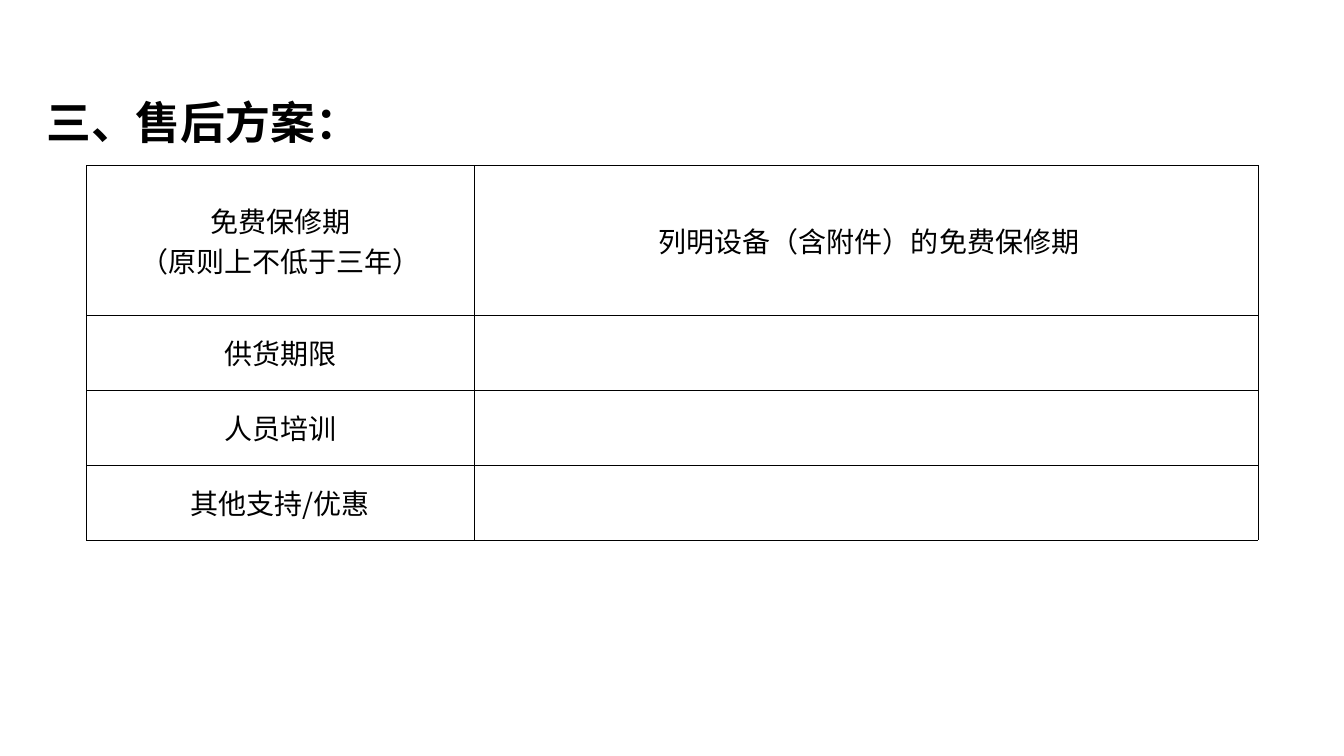
from dataclasses import dataclass

import pptx
import pptx.dml.color
import pptx.enum.text
import pptx.oxml.ns
import pptx.table
import pptx.text.text
import pptx.util
from lxml import etree

Pt = pptx.util.Pt
FONT = "Noto Sans CJK SC"
BLACK = "000000"
UNIT_HEIGHT = 53.5
COLUMN_WIDTHS = (276.5, 560)


@dataclass
class ServiceRow:
    label: str
    detail: str = ""
    units: int = 1  # height in multiples of UNIT_HEIGHT


SERVICE_ROWS = [
    ServiceRow("免费保修期\n（原则上不低于三年）", " 列明设备（含附件）的免费保修期", 2),
    ServiceRow("供货期限"),
    ServiceRow("人员培训"),
    ServiceRow("其他支持/优惠"),
]


def color(value: str) -> pptx.dml.color.RGBColor:
    return pptx.dml.color.RGBColor.from_string(value)


def style_paragraph(para: pptx.text.text._Paragraph, size: float, bold: bool = False) -> None:
    para.font.size = Pt(size)
    para.font.bold = bold
    para.font.color.rgb = color(BLACK)
    para.font.name = FONT
    # East Asian typeface
    properties = para._p.get_or_add_pPr().get_or_add_defRPr()
    etree.SubElement(properties, pptx.oxml.ns.qn("a:ea"), typeface=FONT)


def add_borders(cell: pptx.table._Cell, width: float) -> None:
    properties = cell._tc.get_or_add_tcPr()
    for side in ("lnL", "lnR", "lnT", "lnB"):
        line = etree.SubElement(properties, pptx.oxml.ns.qn(f"a:{side}"), w=str(Pt(width)))
        fill = etree.SubElement(line, pptx.oxml.ns.qn("a:solidFill"))
        etree.SubElement(fill, pptx.oxml.ns.qn("a:srgbClr"), val=BLACK)


def fill_cell(cell: pptx.table._Cell, text: str) -> None:
    cell.margin_left = cell.margin_right = cell.margin_top = cell.margin_bottom = Pt(0)
    cell.vertical_anchor = pptx.enum.text.MSO_ANCHOR.MIDDLE
    add_borders(cell, 0.5)
    cell.fill.background()
    cell.text_frame.text = text
    for para in cell.text_frame.paragraphs:
        para.alignment = pptx.enum.text.PP_ALIGN.CENTER
        style_paragraph(para, 20)


def main() -> None:
    deck = pptx.Presentation()
    deck.slide_width, deck.slide_height = Pt(960), Pt(540)
    page = deck.slides.add_slide(deck.slide_layouts[6])

    # After-sales table
    total_height = UNIT_HEIGHT * sum(row.units for row in SERVICE_ROWS)
    frame = page.shapes.add_table(
        len(SERVICE_ROWS), len(COLUMN_WIDTHS),
        Pt(62), Pt(118.2), Pt(sum(COLUMN_WIDTHS)), Pt(total_height),
    )
    table = frame.table
    table.first_row = table.horz_banding = False
    for column, width in zip(table.columns, COLUMN_WIDTHS):
        column.width = Pt(width)
    for index, row in enumerate(SERVICE_ROWS):
        table.rows[index].height = Pt(row.units * UNIT_HEIGHT)
        fill_cell(table.cell(index, 0), row.label)
        fill_cell(table.cell(index, 1), row.detail)

    # Section title
    box = page.shapes.add_textbox(Pt(26), Pt(64), Pt(312), Pt(45.5))
    box.text_frame.word_wrap = True
    box.text_frame.auto_size = pptx.enum.text.MSO_AUTO_SIZE.SHAPE_TO_FIT_TEXT
    box.text_frame.text = "三、售后方案："
    style_paragraph(box.text_frame.paragraphs[0], 32, bold=True)

    deck.save("out.pptx")


if __name__ == "__main__":
    main()
